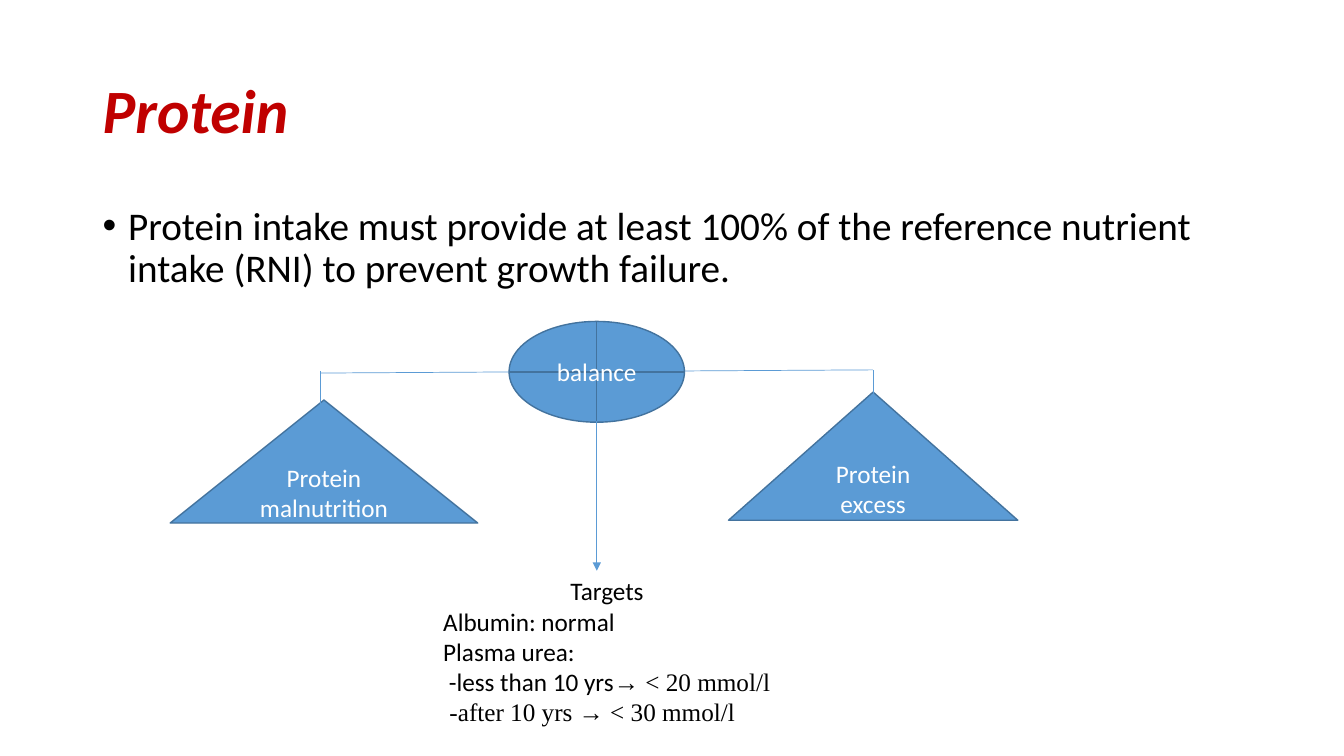
"""Build the protein balance slide."""
import dataclasses
import typing

import lxml.etree
import pptx
import pptx.dml.color
import pptx.enum.shapes
import pptx.enum.text
import pptx.oxml.ns
import pptx.util

Cm = pptx.util.Cm
Pt = pptx.util.Pt
Shapes = pptx.enum.shapes.MSO_SHAPE
Align = pptx.enum.text.PP_ALIGN
Anchor = pptx.enum.text.MSO_ANCHOR
Box = tuple[float, float, float, float]

BLUE, OUTLINE, RED, BLACK, WHITE = "5B9BD5", "43739E", "C00000", "000000", "FFFFFF"
SANS, SERIF = "Calibri", "Times New Roman"


@dataclasses.dataclass
class Run:
    text: str
    font: str = SANS


@dataclasses.dataclass
class Paragraph:
    runs: list[Run]
    format: dict[str, typing.Any] = dataclasses.field(default_factory=dict)
    bullet: bool = False


@dataclasses.dataclass
class TextBlock:
    box: Box
    paragraphs: list[Paragraph]
    font: dict[str, typing.Any]
    color: str = BLACK
    anchor: Anchor = Anchor.TOP


@dataclasses.dataclass
class Node:
    kind: Shapes
    box: Box
    label: str


@dataclasses.dataclass
class Line:
    start: tuple[float, float]
    end: tuple[float, float]
    arrow: bool = False


TEXT_BLOCKS = [
    TextBlock((2.34, 1.02, 29.21, 3.68),
              [Paragraph([Run("Protein")], {"line_spacing": 0.9})],
              {"size": Pt(44), "bold": True, "italic": True}, RED, Anchor.MIDDLE),
    TextBlock((2.34, 5.08, 29.21, 12.09),
              [Paragraph([Run("Protein intake must provide at least 100% of the reference "
                              "nutrient intake (RNI) to prevent growth failure.")],
                         {"line_spacing": 0.9, "space_before": Pt(10)}, bullet=True)],
              {"size": Pt(28)}),
    TextBlock((10.92, 14.38, 8.76, 4.11),
              [Paragraph([Run("Targets")], {"alignment": Align.CENTER}),
               Paragraph([Run("Albumin: normal")]),
               Paragraph([Run("Plasma urea:")]),
               Paragraph([Run(" -less than 10 yrs"), Run("→ ˂ 20 mmol/l", SERIF)]),
               Paragraph([Run(" -after 10 yrs → ˂ 30 mmol/l", SERIF)])],
              {"size": Pt(18)}),
]
PANS = [
    Node(Shapes.ISOSCELES_TRIANGLE, (4.29, 10.08, 7.75, 3.1), "Protein malnutrition"),
    Node(Shapes.ISOSCELES_TRIANGLE, (18.36, 9.88, 7.29, 3.23), "Protein excess"),
]
BEAM = [
    Line((8.08, 9.4), (22, 9.32)),
    Line((8.08, 9.35), (8.08, 10.72)),
    Line((22, 9.32), (22, 10.36)),
]
PIVOT = Node(Shapes.FLOWCHART_OR, (12.83, 8.1, 4.42, 2.54), "balance")
POINTER = Line((15.04, 10.62), (15.04, 14.38), arrow=True)


def rgb(value: str) -> pptx.dml.color.RGBColor:
    """Turn a hex string into a colour."""
    return pptx.dml.color.RGBColor.from_string(value)


def apply(target: typing.Any, values: dict[str, typing.Any]) -> None:
    """Set every attribute named in the format values."""
    for name, value in values.items():
        setattr(target, name, value)


def add_child(parent: typing.Any, tag: str, **attributes: str) -> None:
    """Append a drawing element to its parent."""
    lxml.etree.SubElement(parent, pptx.oxml.ns.qn(tag), attributes)


def write_paragraphs(frame: typing.Any, paragraphs: list[Paragraph],
                     font: dict[str, typing.Any], color: str) -> None:
    """Fill a text frame with formatted paragraphs."""
    for index, item in enumerate(paragraphs):
        paragraph = frame.add_paragraph() if index else frame.paragraphs[0]
        apply(paragraph, item.format)
        if item.bullet:
            properties = paragraph._p.get_or_add_pPr()
            properties.set("marL", str(Cm(0.64)))
            properties.set("indent", str(Cm(-0.64)))
            add_child(properties, "a:buFont", typeface="Arial")
            add_child(properties, "a:buChar", char="•")
        for piece in item.runs:
            run = paragraph.add_run()
            run.text = piece.text
            apply(run.font, {**font, "name": piece.font})
            run.font.color.rgb = rgb(color)


def add_text(slide: typing.Any, block: TextBlock) -> None:
    """Draw a wrapped text box."""
    frame = slide.shapes.add_textbox(*map(Cm, block.box)).text_frame
    apply(frame, {"word_wrap": True, "vertical_anchor": block.anchor})
    write_paragraphs(frame, block.paragraphs, block.font, block.color)


def add_node(slide: typing.Any, node: Node) -> None:
    """Draw a filled shape with a centred label."""
    shape = slide.shapes.add_shape(node.kind, *map(Cm, node.box))
    shape.shadow.inherit = False
    shape.fill.solid()
    shape.fill.fore_color.rgb = rgb(BLUE)
    shape.line.color.rgb = rgb(OUTLINE)
    shape.line.width = Pt(1)
    apply(shape.text_frame, {"word_wrap": True, "vertical_anchor": Anchor.MIDDLE})
    label = Paragraph([Run(node.label)], {"alignment": Align.CENTER})
    write_paragraphs(shape.text_frame, [label], {"size": Pt(18)}, WHITE)


def add_line(slide: typing.Any, line: Line) -> None:
    """Draw a thin straight line, with an arrowhead if asked."""
    connector = slide.shapes.add_connector(
        pptx.enum.shapes.MSO_CONNECTOR.STRAIGHT, *map(Cm, line.start + line.end))
    connector.line.color.rgb = rgb(BLUE)
    connector.line.width = Pt(0.5)
    if line.arrow:
        add_child(connector.line._get_or_add_ln(), "a:tailEnd", type="triangle")
    add_child(connector._element.spPr, "a:effectLst")


def main() -> None:
    """Build and save the presentation."""
    presentation = pptx.Presentation()
    apply(presentation, {"slide_width": Cm(33.87), "slide_height": Cm(19.05)})
    slide = presentation.slides.add_slide(presentation.slide_layouts[6])
    for block in TEXT_BLOCKS:
        add_text(slide, block)
    for pan in PANS:
        add_node(slide, pan)
    for line in BEAM:
        add_line(slide, line)
    add_node(slide, PIVOT)
    add_line(slide, POINTER)
    presentation.save("out.pptx")


if __name__ == "__main__":
    main()
